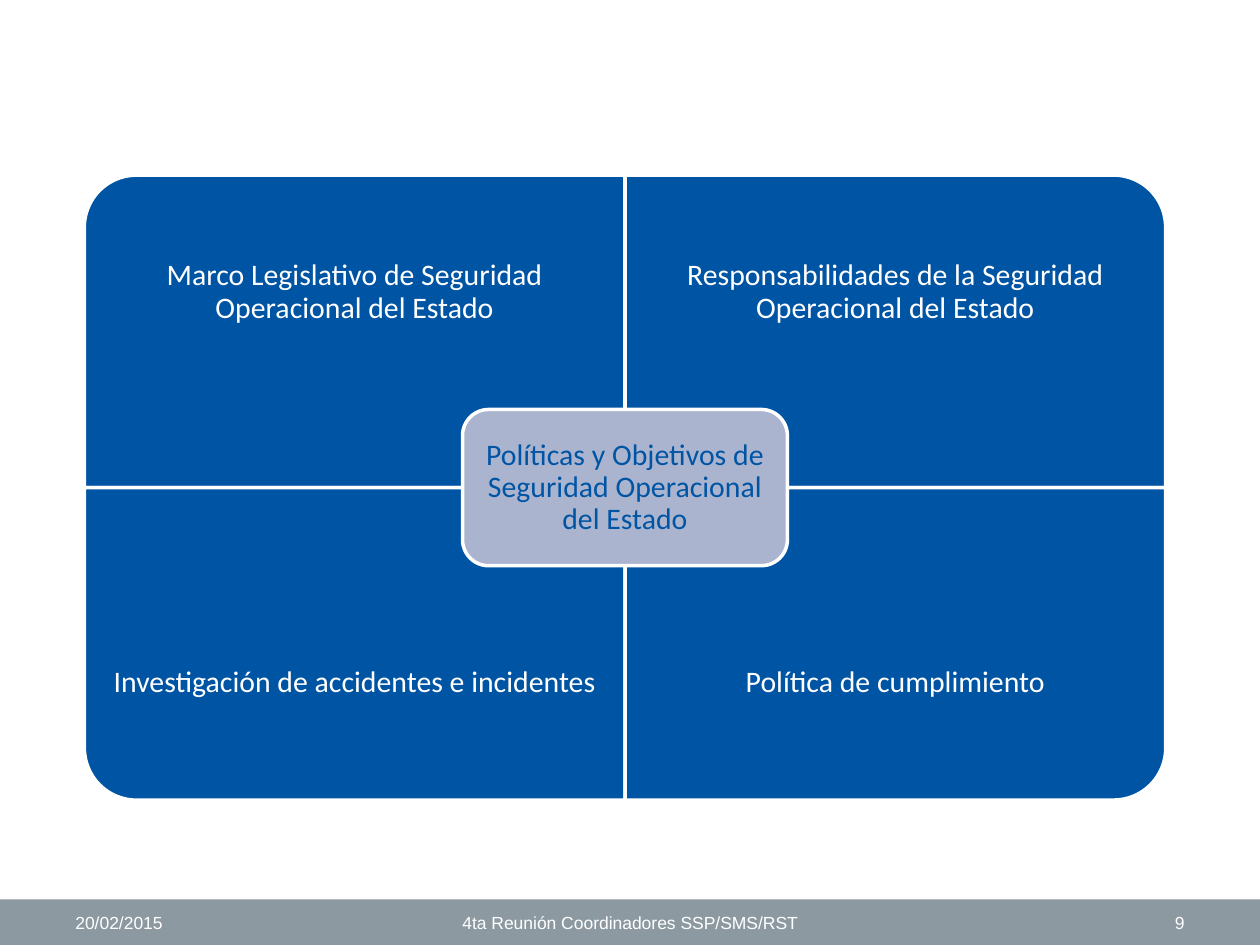
from dataclasses import dataclass

from pptx import Presentation
from pptx.dml.color import RGBColor
from pptx.enum.shapes import MSO_SHAPE
from pptx.enum.text import MSO_ANCHOR, PP_ALIGN
from pptx.util import Cm, Pt


@dataclass(frozen=True)
class Theme:
    white: RGBColor = RGBColor(0xFF, 0xFF, 0xFF)
    blue: RGBColor = RGBColor(0x00, 0x54, 0xA4)
    lavender: RGBColor = RGBColor(0xAB, 0xB4, 0xCF)
    grey: RGBColor = RGBColor(0x8C, 0x99, 0xA1)
    body_size: Pt = Pt(17)
    footer_size: Pt = Pt(10)
    line_width: Pt = Pt(2)


theme = Theme()
presentation = Presentation()
presentation.slide_width = Cm(25.4)
presentation.slide_height = Cm(19.05)
slide = presentation.slides.add_slide(presentation.slide_layouts[6])


def add_block(kind, left, top, width, height, fill, outlined=True):
    shape = slide.shapes.add_shape(kind, Cm(left), Cm(top), Cm(width), Cm(height))
    shape.shadow.inherit = False
    shape.fill.solid()
    shape.fill.fore_color.rgb = fill
    if outlined:
        shape.line.color.rgb = theme.white
        shape.line.width = theme.line_width
    else:
        shape.line.fill.background()
    return shape


def write_text(shape, text, font, alignment, margins=(0.25, 0.13), line_spacing=None):
    """Fill a shape with one paragraph; margins are (sides, top and bottom) in cm."""
    side, end = (Cm(margin) for margin in margins)
    frame = shape.text_frame
    frame_format = {
        "word_wrap": True,
        "vertical_anchor": MSO_ANCHOR.MIDDLE,
        "margin_left": side,
        "margin_right": side,
        "margin_top": end,
        "margin_bottom": end,
    }
    for name, value in frame_format.items():
        setattr(frame, name, value)
    paragraph = frame.paragraphs[0]
    paragraph.alignment = alignment
    paragraph.line_spacing = line_spacing
    run = paragraph.add_run()
    run.text = text
    for name, value in font.items():
        if name == "color":
            run.font.color.rgb = value
        else:
            setattr(run.font, name, value)


# Footer bar
footer_top, footer_height = 18.13, 0.92
add_block(MSO_SHAPE.RECTANGLE, 0, footer_top, 25.4, footer_height, theme.grey, outlined=False)

# Four panels around a centre point, each with its round corner outwards
center_x, center_y = 12.6, 9.83
panel_width, panel_height = 10.9, 6.3
label_height = panel_height * 0.75
panel_font = {"name": "Calibri", "size": theme.body_size, "color": theme.white}
panels = [
    ("Marco Legislativo de Seguridad Operacional del Estado", 0, 0, 270),
    ("Responsabilidades de la Seguridad Operacional del Estado", 1, 0, 0),
    ("Investigación de accidentes e incidentes", 0, 1, 180),
    ("Política de cumplimiento", 1, 1, 90),
]
for text, column, row, rotation in panels:
    left = center_x + (column - 1) * panel_width
    top = center_y + (row - 1) * panel_height
    # A quarter turn swaps the sides about the panel's middle
    width, height = panel_width, panel_height
    if rotation in (90, 270):
        width, height = height, width
    panel = add_block(
        MSO_SHAPE.ROUND_1_RECTANGLE,
        left + (panel_width - width) / 2,
        top + (panel_height - height) / 2,
        width, height, theme.blue,
    )
    panel.rotation = rotation
    label_top = top + row * (panel_height - label_height)
    label = slide.shapes.add_textbox(Cm(left), Cm(label_top), Cm(panel_width), Cm(label_height))
    write_text(label, text, panel_font, PP_ALIGN.CENTER, (0.33, 0.33), 0.9)

# Central topic
topic_width, topic_height = 6.55, 3.15
topic = add_block(
    MSO_SHAPE.ROUNDED_RECTANGLE,
    center_x - topic_width / 2, center_y - topic_height / 2,
    topic_width, topic_height, theme.lavender,
)
write_text(
    topic, "Políticas y Objetivos de Seguridad Operacional del Estado",
    panel_font | {"color": theme.blue}, PP_ALIGN.CENTER, (0.17, 0.17), 0.9,
)

# Footer texts
footer_font = {"name": "Arial", "size": theme.footer_size, "color": theme.white}
footers = [
    ("20/02/2015", 1.27, 5.93, PP_ALIGN.LEFT),
    ("4ta Reunión Coordinadores SSP/SMS/RST", 8.68, 8.04, PP_ALIGN.CENTER),
    ("9", 18.2, 5.93, PP_ALIGN.RIGHT),
]
for text, left, width, alignment in footers:
    footer = slide.shapes.add_textbox(Cm(left), Cm(footer_top), Cm(width), Cm(footer_height))
    write_text(footer, text, footer_font, alignment)

presentation.save("out.pptx")
